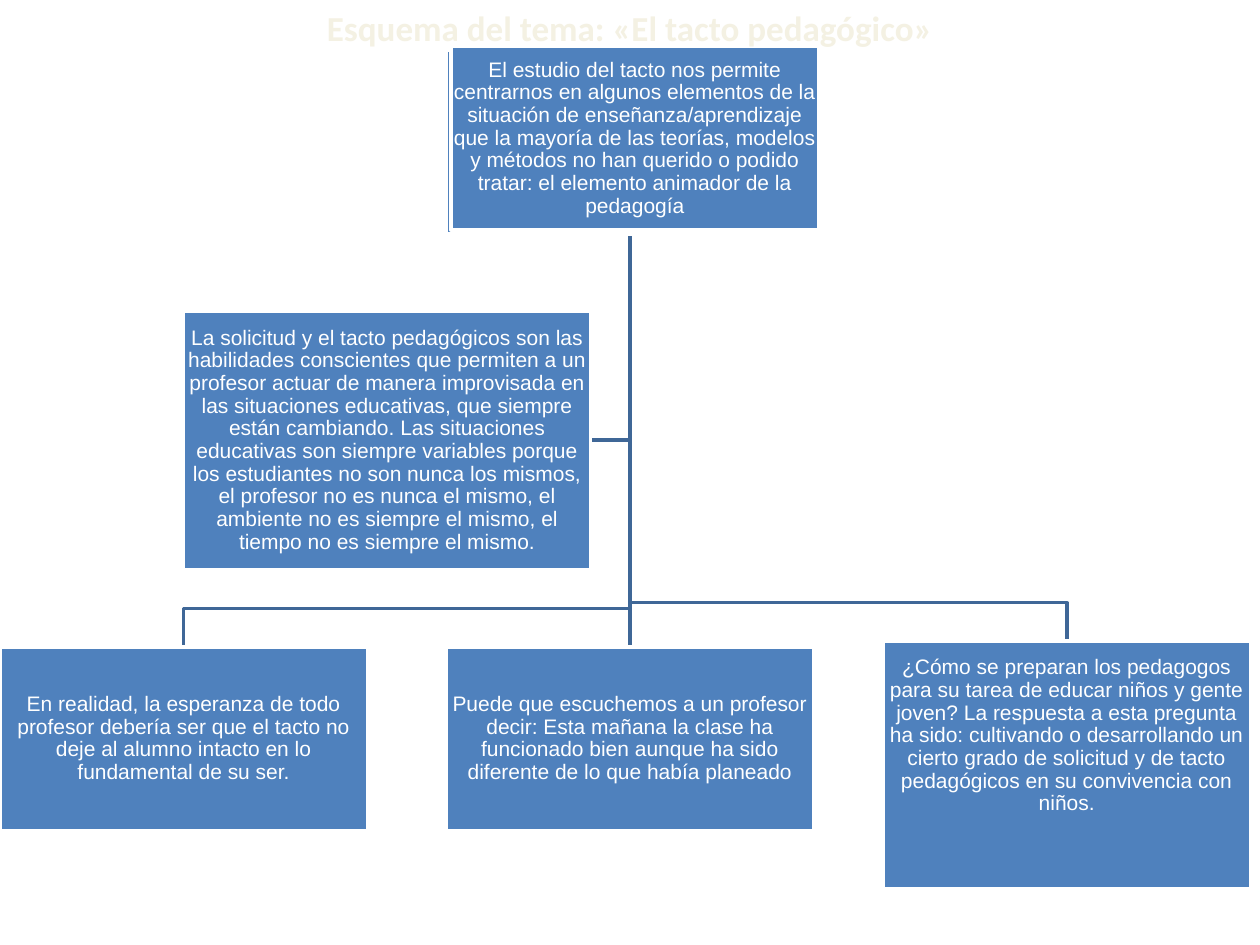
from dataclasses import dataclass

from lxml import etree
from pptx import Presentation
from pptx.dml.color import RGBColor
from pptx.enum import shapes, text
from pptx.oxml import ns
from pptx.util import Pt


@dataclass(frozen=True)
class Theme:
    box: RGBColor = RGBColor.from_string("4F81BD")
    border: RGBColor = RGBColor.from_string("FFFFFF")
    link: RGBColor = RGBColor.from_string("3F6797")
    title: RGBColor = RGBColor.from_string("F4F1E3")
    title_edge: str = "054697"
    title_size: int = 20
    body_size: int = 12
    line: int = 2


THEME = Theme()
TRUNK_X = 360
ROOT_BACK = (255, 28.8, 210, 105)
ROOT = (257.8, 26.6, 210, 105)
ASIDE = (105, 177.8, 232.6, 147.6)
LEFT = (0, 369.6, 210, 105)
MIDDLE = (255, 369.6, 210, 105)
RIGHT = (504.6, 366.4, 210, 141.8)
ELBOW_RISE = 22

# (box, text, bottom inset)
NODES = [
    (LEFT, "En realidad, la esperanza de todo profesor debería ser que el tacto no "
           "deje al alumno intacto en lo fundamental de su ser.", 0.7),
    (MIDDLE, "Puede que escuchemos a un profesor decir: Esta mañana la clase ha "
             "funcionado bien aunque ha sido diferente de lo que había planeado", 0.7),
    (RIGHT, "¿Cómo se preparan los pedagogos para su tarea de educar niños y gente "
            "joven? La respuesta a esta pregunta ha sido: cultivando o desarrollando un "
            "cierto grado de solicitud y de tacto pedagógicos en su convivencia con "
            "niños.", 34),
    (ASIDE, "La solicitud y el tacto pedagógicos son las habilidades conscientes que "
            "permiten a un profesor actuar de manera improvisada en las situaciones "
            "educativas, que siempre están cambiando. Las situaciones educativas son "
            "siempre variables porque los estudiantes no son nunca los mismos, el "
            "profesor no es nunca el mismo, el ambiente no es siempre el mismo, el "
            "tiempo no es siempre el mismo.", 0.7),
    (ROOT, "El estudio del tacto nos permite centrarnos en algunos elementos de la "
           "situación de enseñanza/aprendizaje que la mayoría de las teorías, modelos "
           "y métodos no han querido o podido tratar: el elemento animador de la "
           "pedagogía", 0.7),
]


def set_all(target, **values):
    for name, value in values.items():
        setattr(target, name, value)


def style_line(s, color):
    s.line.color.rgb = color
    s.line.width = Pt(THEME.line)


def add_text(tf, content, color, **font):
    p = tf.paragraphs[0]
    p.alignment = text.PP_ALIGN.CENTER
    r = p.add_run()
    r.text = content
    r.font.color.rgb = color
    set_all(r.font, **font)
    return p, r


def add_elbow(slide, points):
    points = [(Pt(x), Pt(y)) for x, y in points]
    builder = slide.shapes.build_freeform(*points[0])
    builder.add_line_segments(points[1:], close=False)
    s = builder.convert_to_shape()
    s.shadow.inherit = False
    s.fill.background()
    style_line(s, THEME.link)


def add_trunk(slide, top, bottom):
    s = slide.shapes.add_connector(shapes.MSO_CONNECTOR.STRAIGHT,
                                   Pt(TRUNK_X), Pt(top), Pt(TRUNK_X), Pt(bottom))
    style_line(s, THEME.link)
    etree.SubElement(s._element.spPr, ns.qn("a:effectLst"))


def add_links(slide):
    """Join the root box to the aside and to the three boxes below it."""
    start = ROOT_BACK[1] + ROOT_BACK[3]
    x, y, w, h = ASIDE
    add_elbow(slide, [(TRUNK_X, start), (TRUNK_X, y + h / 2), (x + w, y + h / 2)])
    for x, y, w, _ in (RIGHT, LEFT):
        center, turn = x + w / 2, y - ELBOW_RISE
        add_elbow(slide, [(TRUNK_X, start), (TRUNK_X, turn), (center, turn), (center, y)])
    add_trunk(slide, start, MIDDLE[1])


def add_box(slide, box):
    s = slide.shapes.add_shape(shapes.MSO_SHAPE.RECTANGLE, *map(Pt, box))
    s.shadow.inherit = False
    s.fill.solid()
    s.fill.fore_color.rgb = THEME.box
    style_line(s, THEME.border)
    return s


def add_node(slide, box, content, bottom):
    tf = add_box(slide, box).text_frame
    inset = Pt(0.7)
    set_all(tf, word_wrap=True, vertical_anchor=text.MSO_ANCHOR.MIDDLE,
            margin_left=inset, margin_right=inset, margin_top=inset,
            margin_bottom=Pt(bottom))
    p, _ = add_text(tf, content, THEME.border, name="Arial", size=Pt(THEME.body_size))
    p.line_spacing = 0.9


def add_title(slide, box):
    tf = slide.shapes.add_textbox(*map(Pt, box)).text_frame
    set_all(tf, word_wrap=True, auto_size=text.MSO_AUTO_SIZE.SHAPE_TO_FIT_TEXT)
    _, r = add_text(tf, "Esquema del tema: «El tacto pedagógico»", THEME.title,
                    name="Calibri", size=Pt(THEME.title_size), bold=True)
    edge = etree.Element(ns.qn("a:ln"), w=str(Pt(1)))
    fill = etree.SubElement(edge, ns.qn("a:solidFill"))
    etree.SubElement(fill, ns.qn("a:srgbClr"), val=THEME.title_edge)
    r._r.get_or_add_rPr().insert(0, edge)


def main():
    prs = Presentation()
    set_all(prs, slide_width=Pt(720), slide_height=Pt(540))
    slide = prs.slides.add_slide(prs.slide_layouts[6])
    add_links(slide)
    add_box(slide, ROOT_BACK)
    for node in NODES:
        add_node(slide, *node)
    add_title(slide, (0, 0, 720, 31.5))
    prs.save("out.pptx")


if __name__ == "__main__":
    main()
